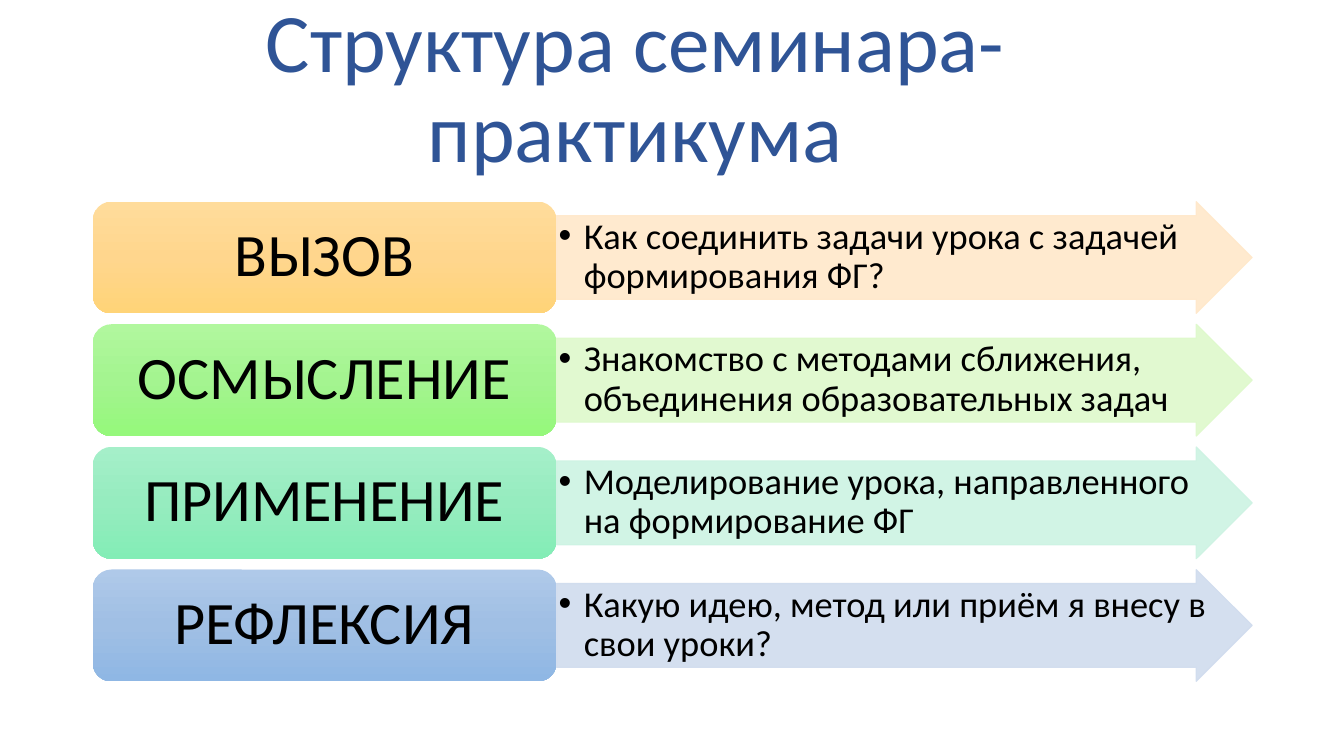
"""Build the slide on the structure of a seminar workshop."""
from copy import deepcopy
from dataclasses import dataclass

from lxml.etree import SubElement
from pptx import Presentation
from pptx.dml.color import RGBColor
from pptx.enum.shapes import MSO_SHAPE
from pptx.enum.text import MSO_ANCHOR, PP_ALIGN
from pptx.oxml.ns import qn
from pptx.shapes.autoshape import Shape
from pptx.slide import Slide
from pptx.text.text import _Paragraph as Paragraph
from pptx.util import Inches, Pt

FONT = "Calibri"
BLACK = RGBColor(0x00, 0x00, 0x00)
TITLE_BLUE = RGBColor(0x2F, 0x54, 0x96)

STAGE_LEFT, STAGE_WIDTH = 0.92, 4.6
ARROW_LEFT, ARROW_WIDTH = STAGE_LEFT + STAGE_WIDTH, 6.9
FIRST_TOP, ROW_HEIGHT, ROW_PITCH = 2, 1.11, 3.65 / 3


@dataclass(frozen=True)
class Stage:
    name: str
    task: str
    arrow_color: RGBColor
    gradient: tuple[RGBColor, RGBColor, RGBColor]


STAGES = (
    Stage("ВЫЗОВ", "Как соединить задачи урока с задачей формирования ФГ?",
          RGBColor(0xFF, 0xE8, 0xCA),
          (RGBColor(0xFF, 0xDC, 0x9B), RGBColor(0xFF, 0xD6, 0x8D), RGBColor(0xFF, 0xD4, 0x78))),
    Stage("ОСМЫСЛЕНИЕ", "Знакомство с методами сближения, объединения образовательных задач",
          RGBColor(0xDE, 0xF9, 0xCB),
          (RGBColor(0xB1, 0xF7, 0x9E), RGBColor(0xA4, 0xF4, 0x90), RGBColor(0x95, 0xF8, 0x7B))),
    Stage("ПРИМЕНЕНИЕ", "Моделирование урока, направленного на формирование ФГ",
          RGBColor(0xCD, 0xF3, 0xE3),
          (RGBColor(0xA5, 0xEF, 0xC9), RGBColor(0x96, 0xEC, 0xBF), RGBColor(0x83, 0xED, 0xB6))),
    Stage("РЕФЛЕКСИЯ", "Какую идею, метод или приём я внесу в свои уроки?",
          RGBColor(0xD0, 0xDC, 0xEE),
          (RGBColor(0xAF, 0xC9, 0xE9), RGBColor(0xA0, 0xBF, 0xE4), RGBColor(0x8F, 0xB7, 0xE4))),
)


def add_text(slide: Slide, text: str, left: float, top: float, width: float, height: float,
             size: float, color: RGBColor, margins: tuple[float, float],
             align: PP_ALIGN = PP_ALIGN.CENTER,
             anchor: MSO_ANCHOR = MSO_ANCHOR.MIDDLE) -> Paragraph:
    box = slide.shapes.add_textbox(Inches(left), Inches(top), Inches(width), Inches(height))
    frame = box.text_frame
    frame.word_wrap = True
    frame.vertical_anchor = anchor
    frame.margin_left = frame.margin_right = Inches(margins[0])
    frame.margin_top = frame.margin_bottom = Inches(margins[1])
    frame.text = text
    paragraph = frame.paragraphs[0]
    paragraph.alignment = align
    paragraph.line_spacing = 0.9
    font = paragraph.runs[0].font
    font.name = FONT
    font.size = Pt(size)
    font.color.rgb = color
    return paragraph


def add_bullet(paragraph: Paragraph) -> None:
    properties = paragraph._p.get_or_add_pPr()
    properties.set("marL", str(Inches(0.25)))
    properties.set("indent", str(-Inches(0.25)))
    bullet_color = SubElement(properties, qn("a:buClr"))
    SubElement(bullet_color, qn("a:srgbClr"), val=str(BLACK))
    SubElement(properties, qn("a:buFont"), typeface="Arial")
    SubElement(properties, qn("a:buChar"), char="•")


def add_arrow(slide: Slide, top: float, color: RGBColor) -> None:
    arrow = slide.shapes.add_shape(MSO_SHAPE.RIGHT_ARROW, Inches(ARROW_LEFT), Inches(top),
                                   Inches(ARROW_WIDTH), Inches(ROW_HEIGHT))
    arrow.shadow.inherit = False
    arrow.adjustments[0] = 0.75
    arrow.adjustments[1] = 0.5
    arrow.fill.solid()
    arrow.fill.fore_color.rgb = color
    arrow.line.color.rgb = color
    arrow.line.width = Pt(0.75)
    for shade in arrow.element.spPr.iter(qn("a:srgbClr")):
        SubElement(shade, qn("a:alpha"), val="90000")


def fill_gradient(shape: Shape, colors: tuple[RGBColor, ...]) -> None:
    shape.fill.gradient()
    shape.fill.gradient_angle = 270
    stop_list = next(shape.element.spPr.iter(qn("a:gsLst")))
    stop_list.insert(1, deepcopy(stop_list[0]))
    for index, (stop, color) in enumerate(zip(shape.fill.gradient_stops, colors)):
        stop.position = index / (len(colors) - 1)
        stop.color.rgb = color


def add_stage(slide: Slide, stage: Stage, top: float) -> None:
    add_arrow(slide, top, stage.arrow_color)
    task = add_text(slide, stage.task, ARROW_LEFT, top + 0.14, 6.49, 0.83, 26, BLACK,
                    (0.02, 0.02), PP_ALIGN.LEFT, MSO_ANCHOR.TOP)
    add_bullet(task)
    block = slide.shapes.add_shape(MSO_SHAPE.ROUNDED_RECTANGLE, Inches(STAGE_LEFT), Inches(top),
                                   Inches(STAGE_WIDTH), Inches(ROW_HEIGHT))
    block.shadow.inherit = False
    block.adjustments[0] = 0.167
    block.line.fill.background()
    fill_gradient(block, stage.gradient)
    add_text(slide, stage.name, STAGE_LEFT + 0.05, top + 0.05, 4.49, 1, 43, BLACK, (0.18, 0.09))


def main() -> None:
    presentation = Presentation()
    presentation.slide_width = Inches(13.33)
    presentation.slide_height = Inches(7.5)
    slide = presentation.slides.add_slide(presentation.slide_layouts[6])
    add_text(slide, "Структура семинара-практикума", 0.55, 0.28, 11.5, 1.24, 59.4,
             TITLE_BLUE, (0.1, 0.05))
    for row, stage in enumerate(STAGES):
        add_stage(slide, stage, FIRST_TOP + row * ROW_PITCH)
    presentation.save("out.pptx")


if __name__ == "__main__":
    main()
